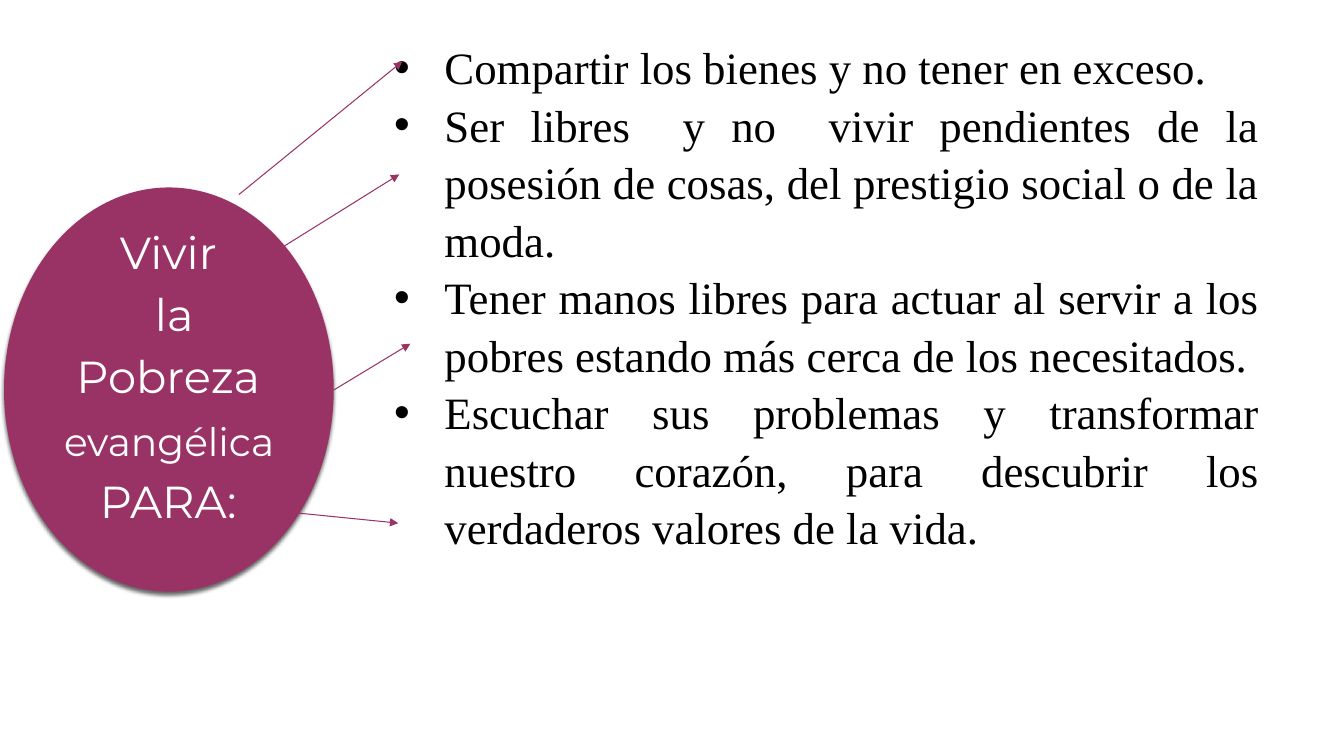
from lxml import etree
from pptx import Presentation
from pptx.dml.color import RGBColor
from pptx.enum.shapes import MSO_CONNECTOR, MSO_SHAPE
from pptx.enum.text import PP_ALIGN
from pptx.oxml.ns import qn
from pptx.util import Inches, Pt

STRAIGHT = MSO_CONNECTOR.STRAIGHT
ELLIPSE = MSO_SHAPE.OVAL
CENTER, JUSTIFY = PP_ALIGN.CENTER, PP_ALIGN.JUSTIFY
PLUM = RGBColor(0x99, 0x33, 0x66)
WHITE = RGBColor(0xFF, 0xFF, 0xFF)
BLACK = RGBColor(0x00, 0x00, 0x00)

TITLE_LINES = [
    [("Vivir", 32)],
    [(" la", 32)],
    [("Pobreza", 32)],
    [(" ", 32), ("evangélica ", 28)],
    [("PARA:", 32)],
]
PURPOSES = [
    "Compartir los bienes y no tener en exceso. ",
    "Ser libres  y no  vivir pendientes de la posesión de cosas, "
    "del prestigio social o de la moda. ",
    "Tener manos libres para actuar al servir a los pobres "
    "estando más cerca de los necesitados. ",
    "Escuchar sus problemas y transformar nuestro corazón, "
    "para descubrir los verdaderos valores de la vida.",
]
ARROWS = [
    (2.79, 2.46, 3.96, 1.73),
    (3.31, 3.87, 4.07, 3.41),
    (2.56, 5.05, 3.95, 5.19),
    (2.37, 1.93, 3.99, 0.61),
]


def add_text_frame(left, top, width, height):
    box = slide.shapes.add_textbox(*map(Inches, (left, top, width, height)))
    box.text_frame.word_wrap = True
    return box.text_frame


def add_run(paragraph, text, size, font_name, color):
    run = paragraph.add_run()
    run.text = text
    run.font.size = Pt(size)
    run.font.name = font_name
    run.font.color.rgb = color


presentation = Presentation()
presentation.slide_width = Inches(13.33)
presentation.slide_height = Inches(7.5)
slide = presentation.slides.add_slide(presentation.slide_layouts[6])

# Ellipse with a soft shadow below it
ellipse = slide.shapes.add_shape(ELLIPSE, *map(Inches, (0.04, 1.86, 3.27, 4.01)))
ellipse.fill.solid()
ellipse.fill.fore_color.rgb = PLUM
ellipse.line.fill.background()
ellipse.shadow.inherit = False
effects = ellipse._element.spPr.find(qn("a:effectLst"))
shadow = etree.SubElement(effects, qn("a:outerShdw"), blurRad=str(Pt(3)),
                          dist=str(Pt(2)), dir="5400000", rotWithShape="0")
shadow_color = etree.SubElement(shadow, qn("a:srgbClr"), val="000000")
etree.SubElement(shadow_color, qn("a:alpha"), val="60000")

# Title inside the ellipse
title_frame = add_text_frame(0.32, 2.18, 2.7, 3.13)
for index, line in enumerate(TITLE_LINES):
    paragraph = title_frame.add_paragraph() if index else title_frame.paragraphs[0]
    paragraph.alignment = CENTER
    paragraph.space_after = Pt(6)
    for text, size in line:
        add_run(paragraph, text, size, "Montserrat", WHITE)

# Bulleted purposes
purpose_frame = add_text_frame(3.72, 0.31, 8.87, 5.84)
for index, purpose in enumerate(PURPOSES):
    paragraph = purpose_frame.add_paragraph() if index else purpose_frame.paragraphs[0]
    paragraph.alignment = JUSTIFY
    paragraph.line_spacing = 1.07
    properties = paragraph._p.get_or_add_pPr()
    properties.set("marL", str(Inches(0.59)))
    properties.set("indent", str(Inches(-0.5)))
    etree.SubElement(properties, qn("a:buFont"), typeface="Arial")
    etree.SubElement(properties, qn("a:buChar"), char="•")
    tabs = etree.SubElement(properties, qn("a:tabLst"))
    etree.SubElement(tabs, qn("a:tab"), pos=str(Inches(1.48)), algn="l")
    add_run(paragraph, purpose, 32, "Times New Roman", BLACK)

# Arrows from the ellipse to the purposes
for ends in ARROWS:
    arrow = slide.shapes.add_connector(STRAIGHT, *map(Inches, ends))
    arrow.line.color.rgb = PLUM
    arrow.line.width = Pt(0.75)
    etree.SubElement(arrow.line._get_or_add_ln(), qn("a:tailEnd"), type="triangle")
    etree.SubElement(arrow._element.spPr, qn("a:effectLst"))

presentation.save("out.pptx")
